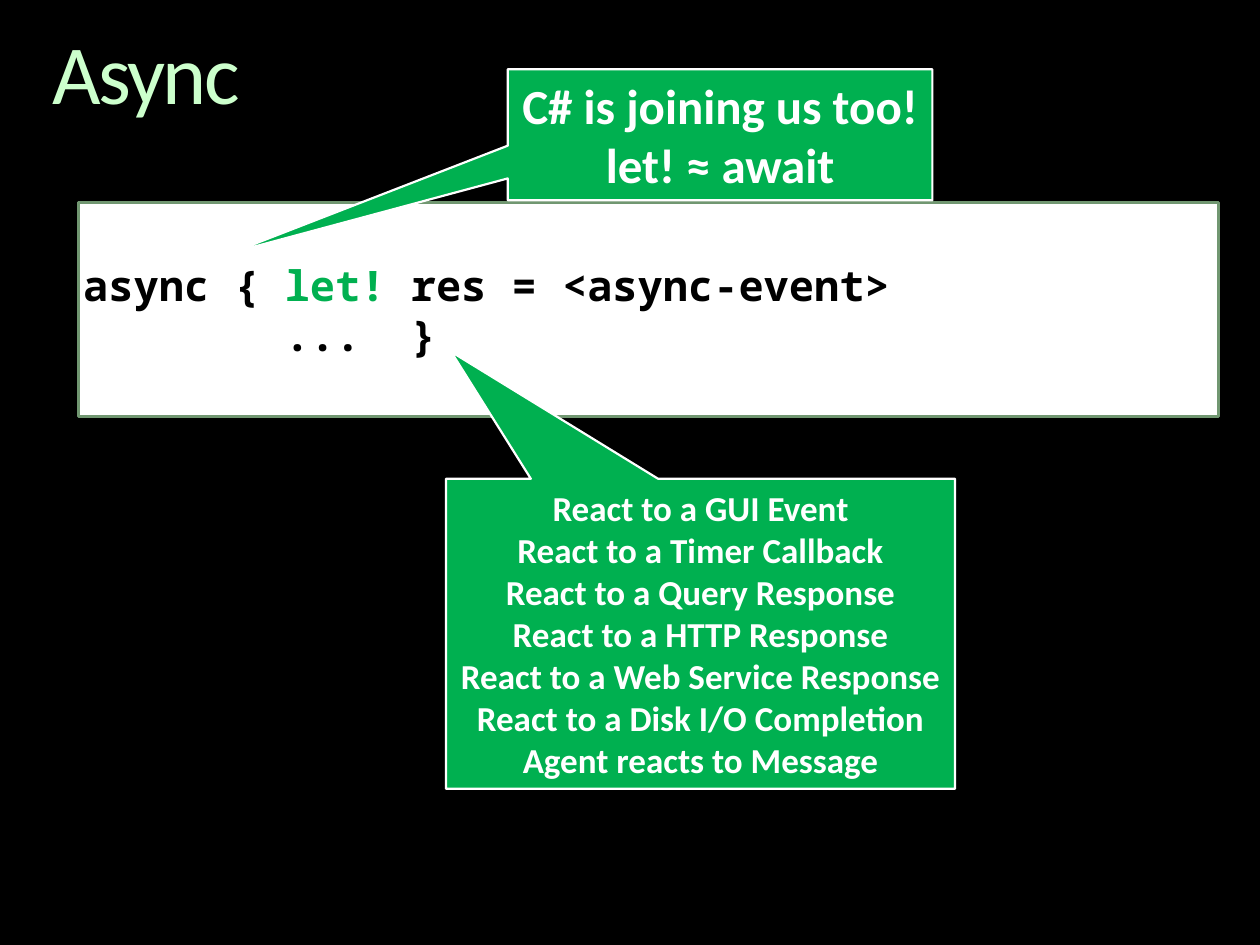
from dataclasses import dataclass

from pptx import Presentation
from pptx.dml.color import RGBColor
from pptx.enum.shapes import MSO_SHAPE
from pptx.enum.text import MSO_ANCHOR, PP_ALIGN
from pptx.util import Inches, Pt


@dataclass(frozen=True)
class Theme:
    font: str = "Calibri"
    code_font: str = "Noto Sans Mono"
    background: str = "000000"
    title: str = "CCFFCC"
    white: str = "FFFFFF"
    code: str = "000000"
    accent: str = "00B050"
    code_border: str = "719771"
    title_size: int = 48
    code_size: int = 24


THEME = Theme()
TITLE = "Async"
CODE_BOX = (0.62, 1.61, 9.05, 1.7)
CODE_LINES = [
    [("async { ", THEME.code), ("let!", THEME.accent), (" res = <async-event>", THEME.code)],
    [("        ...  }", THEME.code)],
]
CALLOUTS = [
    {
        "place": (4.03, 0.55, 3.37, 1.04),
        "pointer": (-1.15, 0.9),
        "size": 28,
        "lines": ["C# is joining us too!", "let! ≈ await"],
    },
    {
        "place": (3.54, 3.8, 4.04, 2.46),
        "pointer": (-0.49, -0.91),
        "size": 20,
        "lines": [
            "React to a GUI Event",
            "React to a Timer Callback",
            "React to a Query Response",
            "React to a HTTP Response",
            "React to a Web Service Response",
            "React to a Disk I/O Completion",
            "Agent reacts to Message",
        ],
    },
]


def style(font, name, size, color, bold=True):
    font.name = name
    font.size = Pt(size)
    font.bold = bold
    font.color.rgb = RGBColor.from_string(color)


def set_margins(frame, margin):
    frame.margin_left = frame.margin_right = Inches(margin)
    frame.margin_top = frame.margin_bottom = Inches(margin)


def add_panel(page, kind, place, fill, border, border_width):
    panel = page.shapes.add_shape(kind, *map(Inches, place))
    panel.shadow.inherit = False
    panel.fill.solid()
    panel.fill.fore_color.rgb = RGBColor.from_string(fill)
    panel.line.color.rgb = RGBColor.from_string(border)
    panel.line.width = Pt(border_width)
    panel.text_frame.vertical_anchor = MSO_ANCHOR.MIDDLE
    return panel


def add_title(page):
    title = page.shapes.title
    title.left, title.top, title.width, title.height = map(Inches, (0.42, 0.25, 9.17, 0.73))
    frame = title.text_frame
    frame.text = TITLE
    frame.vertical_anchor = MSO_ANCHOR.TOP
    set_margins(frame, 0)
    paragraph = frame.paragraphs[0]
    paragraph.alignment = PP_ALIGN.LEFT
    paragraph.line_spacing = 0.9
    span = paragraph.runs[0]
    style(span.font, THEME.font, THEME.title_size, THEME.title, bold=False)
    span._r.get_or_add_rPr().set("spc", "-150")


def add_code(page):
    box = add_panel(page, MSO_SHAPE.RECTANGLE, CODE_BOX, THEME.white, THEME.code_border, 1.75)
    frame = box.text_frame
    frame.word_wrap = True
    set_margins(frame, 0.04)
    for index, line in enumerate(CODE_LINES):
        paragraph = frame.add_paragraph() if index else frame.paragraphs[0]
        paragraph.alignment = PP_ALIGN.LEFT
        for text, color in line:
            span = paragraph.add_run()
            span.text = text
            style(span.font, THEME.code_font, THEME.code_size, color)


def add_callout(page, callout):
    box = add_panel(page, MSO_SHAPE.RECTANGULAR_CALLOUT, callout["place"],
                    THEME.accent, THEME.white, 1.25)
    box.adjustments[0], box.adjustments[1] = callout["pointer"]
    frame = box.text_frame
    frame.word_wrap = False
    frame.text = "\n".join(callout["lines"])
    for paragraph in frame.paragraphs:
        paragraph.alignment = PP_ALIGN.CENTER
        style(paragraph.runs[0].font, THEME.font, callout["size"], THEME.white)


def main():
    deck = Presentation()
    deck.slide_width, deck.slide_height = Inches(10), Inches(7.5)
    page = deck.slides.add_slide(deck.slide_layouts.get_by_name("Title Only"))
    page.background.fill.solid()
    page.background.fill.fore_color.rgb = RGBColor.from_string(THEME.background)
    add_title(page)
    add_code(page)
    for callout in CALLOUTS:
        add_callout(page, callout)
    deck.save("out.pptx")


if __name__ == "__main__":
    main()
